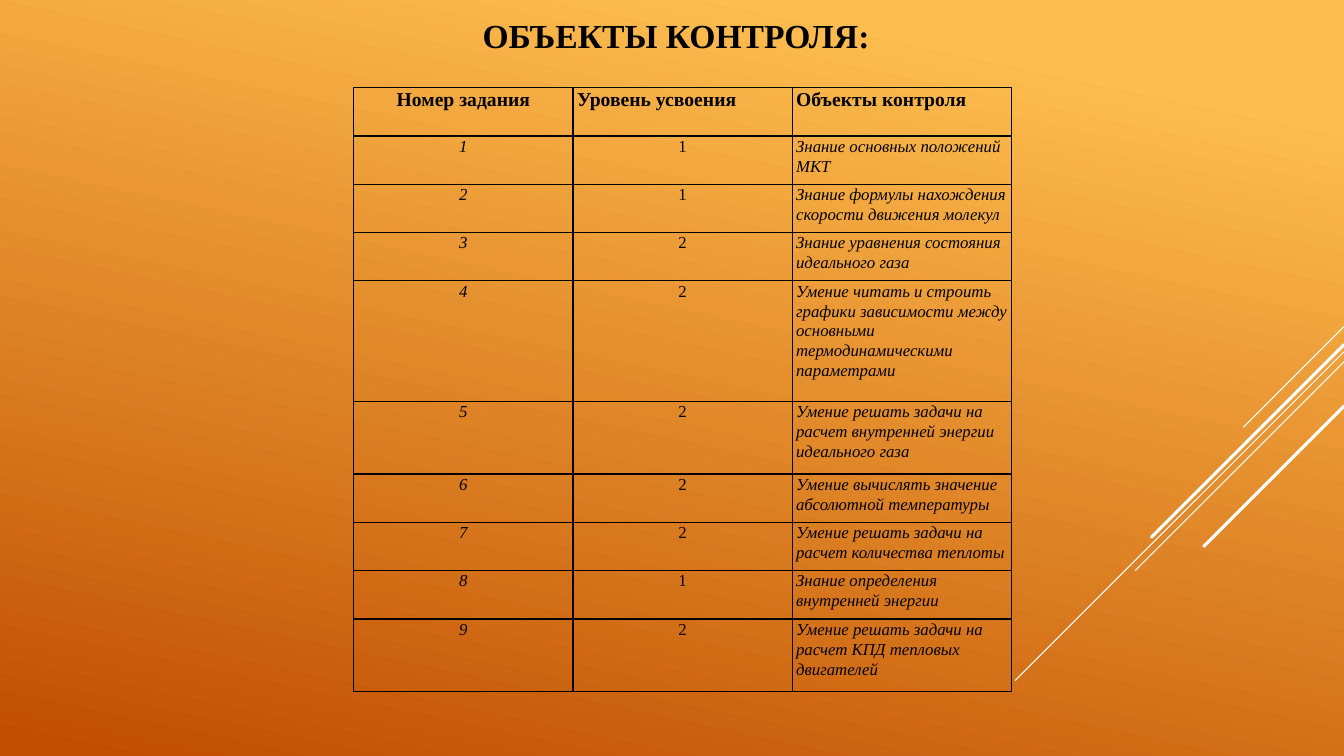
from lxml.etree import SubElement
from pptx import Presentation
from pptx.dml.color import RGBColor as Rgb
from pptx.enum.shapes import MSO_CONNECTOR as Connector
from pptx.enum.text import MSO_ANCHOR as Anchor, MSO_AUTO_SIZE as AutoSize, PP_ALIGN as Align
from pptx.oxml.ns import qn
from pptx.util import Inches, Pt

COLORS = {"light": "FFBF50", "dark": "C04D00", "ray": "FFFFFF", "ink": "000000"}
FONT = "Times New Roman"
SLIDE = (13.33, 7.5)
TITLE_BOX = (4.67, 0.07, 4.07, 0.81)
TABLE_BOX = (3.51, 0.87, 6.52, 5.99)

# Height on the slide's right edge, horizontal reach, line width
RAYS = [(3.24, 1.0, 0.75), (3.49, 3.26, 0.75), (3.59, 2.07, 0.75),
        (3.42, 1.91, 2.25), (4.03, 1.39, 2.25)]

HEADERS = ["Номер задания", "Уровень усвоения", "Объекты контроля"]
# Level, object of control
TASKS = [
    (1, "Знание основных положений МКТ"),
    (1, "Знание формулы нахождения скорости движения молекул"),
    (2, "Знание уравнения состояния идеального газа"),
    (2, "Умение читать и строить графики зависимости между основными "
        "термодинамическими параметрами"),
    (2, "Умение решать задачи на расчет внутренней энергии идеального газа"),
    (2, "Умение вычислять значение абсолютной температуры"),
    (2, "Умение решать задачи на расчет количества теплоты"),
    (1, "Знание определения внутренней энергии"),
    (2, "Умение решать задачи на расчет КПД тепловых двигателей"),
]
# Row heights in table grid units
ROW_UNITS = [2, 2, 2, 2, 5, 3, 2, 2, 2, 3]


def set_all(target, values):
    for name, value in values.items():
        setattr(target, name, value)


def write(para, text, align, **font):
    para.alignment = align
    span = para.add_run()
    span.text = text
    set_all(span.font, {"name": FONT, **font})
    span.font.color.rgb = Rgb.from_string(COLORS["ink"])


def paint_background(page):
    fill = page.background.fill
    fill.gradient()
    fill.gradient_angle = 258
    for stop, position, color in zip(fill.gradient_stops, (0.1, 1), ("light", "dark")):
        stop.position = position
        stop.color.rgb = Rgb.from_string(COLORS[color])


def add_rays(page, right):
    # Each ray descends to the left at 45 degrees
    for top, reach, width in RAYS:
        ray = page.shapes.add_connector(
            Connector.STRAIGHT, Inches(right), Inches(top),
            Inches(right - reach), Inches(top + reach))
        ray.line.color.rgb = Rgb.from_string(COLORS["ray"])
        ray.line.width = Pt(width)
        ray.line._get_or_add_ln().set("cap", "rnd")
        SubElement(ray._element.spPr, qn("a:effectLst"))


def add_title(page, box):
    title = page.shapes.title
    set_all(title, dict(zip(("left", "top", "width", "height"), map(Inches, box))))
    set_all(title.text_frame, {
        "word_wrap": False, "auto_size": AutoSize.NONE,
        "vertical_anchor": Anchor.TOP, "margin_top": Inches(0.08)})
    write(title.text_frame.paragraphs[0], "ОБЪЕКТЫ КОНТРОЛЯ:", Align.CENTER,
          size=Pt(24), bold=True)


def add_borders(cell):
    properties = cell._tc.get_or_add_tcPr()
    for side in ("lnL", "lnR", "lnT", "lnB"):
        border = SubElement(properties, qn(f"a:{side}"), w=str(Pt(1)))
        SubElement(SubElement(border, qn("a:solidFill")), qn("a:srgbClr"), val=COLORS["ink"])


def fill_cell(cell, text, align, **font):
    add_borders(cell)
    cell.fill.background()
    set_all(cell, {"margin_left": Inches(0.04), "margin_right": Inches(0.04),
                   "margin_top": 0, "margin_bottom": 0})
    para = cell.text_frame.paragraphs[0]
    para.line_spacing = 1.07
    write(para, text, align, **font)


def add_task_table(page, box):
    left, top, width, height = map(Inches, box)
    table = page.shapes.add_table(len(ROW_UNITS), len(HEADERS), left, top, width, height).table
    set_all(table, {"first_row": False, "horz_banding": False})
    for row, units in zip(table.rows, ROW_UNITS):
        row.height = height * units // sum(ROW_UNITS)

    # Header row
    for column, text in enumerate(HEADERS):
        fill_cell(table.cell(0, column), text, Align.LEFT if column else Align.CENTER,
                  size=Pt(14), bold=True)

    # One row per task: number, level, object
    for number, (level, skill) in enumerate(TASKS, 1):
        for column, text in enumerate((str(number), str(level), skill)):
            fill_cell(table.cell(number, column), text,
                      Align.LEFT if column == 2 else Align.CENTER,
                      size=Pt(12), bold=False, italic=column != 1)


def main():
    deck = Presentation()
    deck.slide_width, deck.slide_height = map(Inches, SLIDE)
    page = deck.slides.add_slide(deck.slide_layouts[5])
    paint_background(page)
    add_rays(page, SLIDE[0])
    add_task_table(page, TABLE_BOX)
    add_title(page, TITLE_BOX)
    deck.save("out.pptx")


if __name__ == "__main__":
    main()
